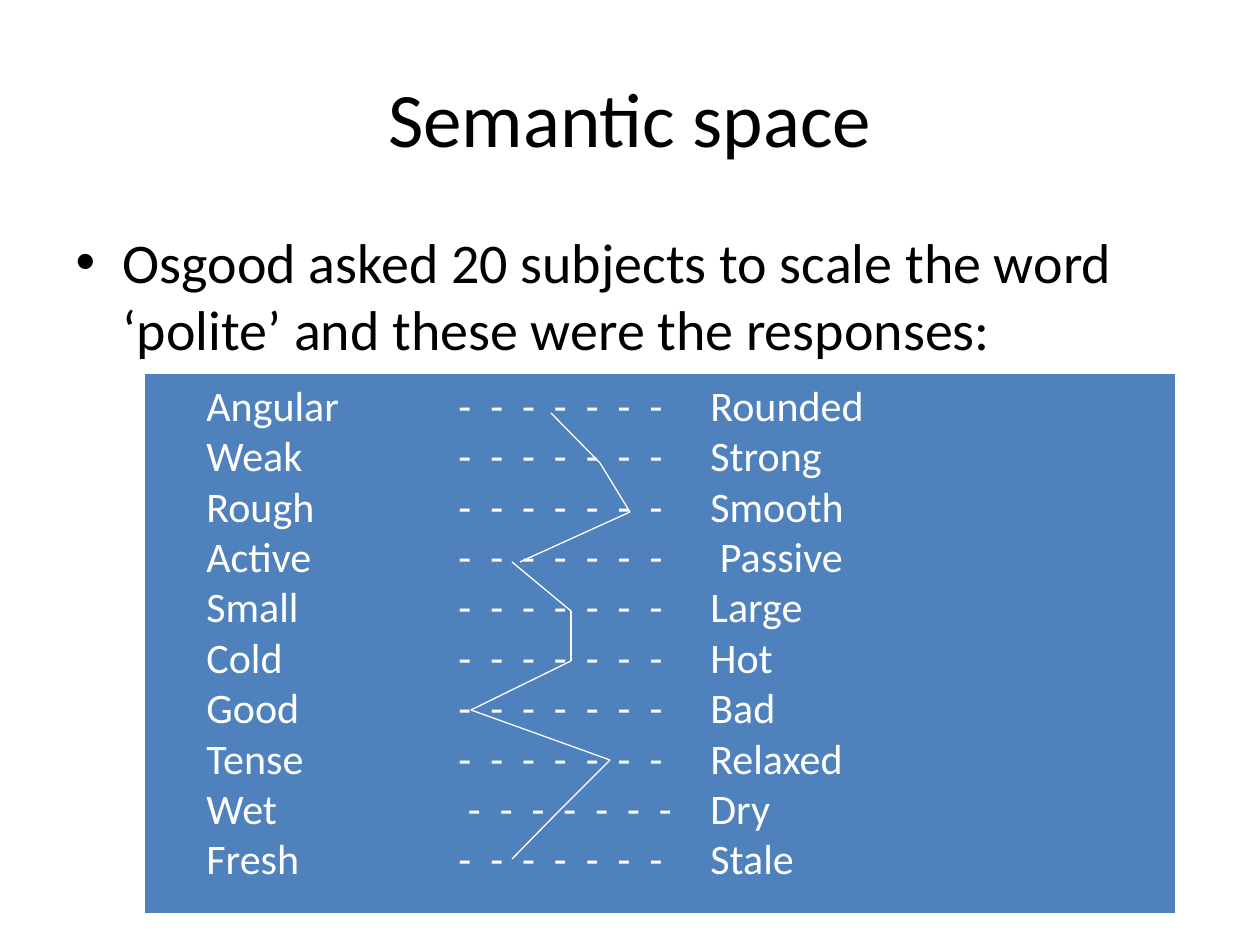
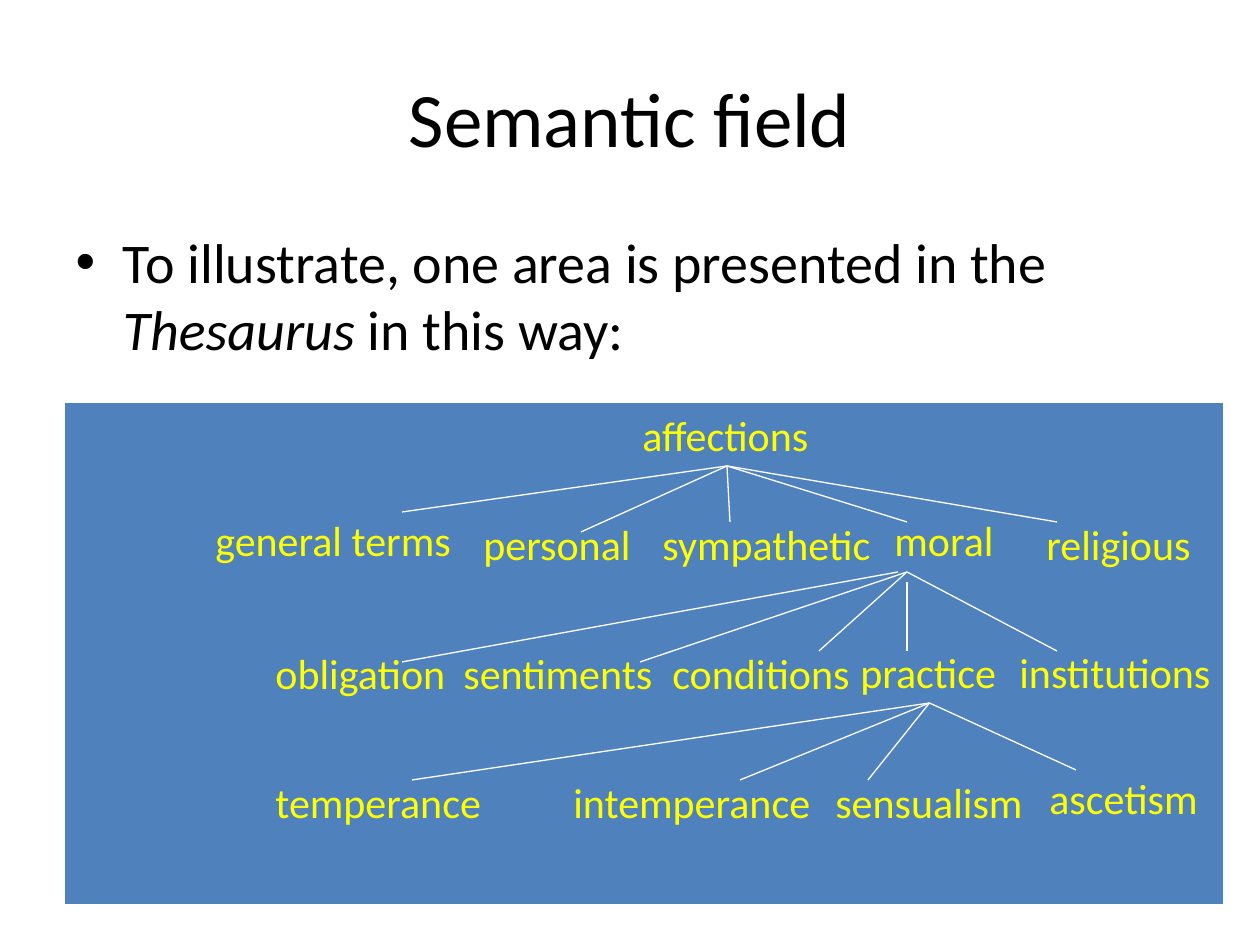
import pptx
import pptx.util
import pptx.dml.color
import pptx.enum.shapes
import pptx.enum.text
import pptx.oxml
import pptx.oxml.ns
from lxml import etree

PX = 914400 // 126
COLORS = {"ink": "000000", "panel": "4F81BD", "line": "FFFFFF",
          "scale": "FFFFFF", "node": "FFFF00"}
FONTS = {
    "title": {"size": pptx.util.Pt(44), "name": "Calibri"},
    "body": {"size": pptx.util.Pt(32), "name": "Calibri"},
    "panel": {"size": pptx.util.Pt(24), "name": "Calibri"},
}
TITLE_BOX = (63, 38, 1134, 158)
BODY_BOX = (63, 221, 1134, 624)
SPACE_PANEL = (144, 373, 1032, 542)
FIELD_PANEL = (64, 402, 1160, 504)
BORDERS = {"a:lnL": 1, "a:lnR": 1, "a:lnT": 1, "a:lnB": 3}

DASHES = "-  -  -  -  -  -  - "
SCALES = [
    ("Angular ", DASHES, "Rounded"), ("Weak ", DASHES, "Strong"),
    ("Rough ", DASHES, "Smooth"), ("Active ", DASHES.rstrip(), " Passive"),
    ("Small ", DASHES, "Large"), ("Cold ", DASHES, "Hot"),
    ("Good ", DASHES, "Bad"), ("Tense ", DASHES, "Relaxed"),
    ("Wet", " " + DASHES, "Dry"), ("Fresh ", DASHES, "Stale"),
]
# The profile has a small break at the fourth scale, so it is two traces:
# (first scale, x of each answer).
PROFILE = [(0, (407, 456, 486, 376)),
           (3, (368, 427, 427, 327, 466, 417, 368))]
PROFILE_TOP, PROFILE_HEIGHT = 40, 446

NODE_HEIGHT = 63
ROOT = ("affections", 566, 1, 194)
# parent, shared line start (None: bottom centre of the parent),
# children as word, left, top, width, line end
BRANCHES = [
    ("affections", None, [
        ("general terms", 139, 106, 263, (338, 110)),
        ("personal", 407, 110, 174, (517, 130)),
        ("sympathetic", 586, 110, 236, (666, 120)),
        ("moral", 818, 106, 126, (843, 120)),
        ("religious", 970, 110, 171, (993, 120))]),
    ("moral", (843, 170), [
        ("obligation", 199, 239, 197, (338, 260)),
        ("sentiments", 387, 239, 217, (576, 260)),
        ("conditions", 596, 239, 204, (755, 249)),
        ("practice", 784, 238, 163, (843, 249)),
        ("institutions", 943, 238, 219, (993, 249))]),
    ("practice", None, [
        ("temperance", 199, 368, 233, (348, 378)),
        ("intemperance", 497, 368, 265, (676, 378)),
        ("sensualism", 759, 368, 214, (804, 378)),
        ("ascetism", 973, 364, 175, (1012, 368))]),
]
OWN_STARTS = {"obligation": (834, 170), "practice": (843, 180)}


def emu(*lengths):
    return [pptx.util.Emu(round(v) * PX) for v in lengths]


def rgb(name):
    return pptx.dml.color.RGBColor.from_string(COLORS[name])


def add_run(p, text, style, color, **extra):
    r = p.add_run()
    r.text = text
    for key, value in {**FONTS[style], **extra}.items():
        setattr(r.font, key, value)
    r.font.color.rgb = rgb(color)


def place(sp, box):
    sp.left, sp.top, sp.width, sp.height = emu(*box)


def add_slide(prs, title, body):
    """Add a titled slide; body is a list of (text, italic) for one bullet."""
    s = prs.slides.add_slide(prs.slide_layouts[1])
    place(s.shapes.title, TITLE_BOX)
    add_run(s.shapes.title.text_frame.paragraphs[0], title, "title", "ink")
    sp = s.placeholders[1]
    place(sp, BODY_BOX)
    for text, italic in body:
        add_run(sp.text_frame.paragraphs[0], text, "body", "ink", italic=italic)
    return s


def add_panel(s, box):
    """Add the one-cell table that backs a diagram."""
    table = s.shapes.add_table(1, 1, *emu(*box)).table
    cell = table.cell(0, 0)
    tc_pr = cell._tc.get_or_add_tcPr()
    for tag, points in BORDERS.items():
        ln = etree.SubElement(tc_pr, pptx.oxml.ns.qn(tag),
                              w=str(pptx.util.Pt(points)))
        fill = etree.SubElement(ln, pptx.oxml.ns.qn("a:solidFill"))
        etree.SubElement(fill, pptx.oxml.ns.qn("a:srgbClr"), val=COLORS["line"])
    cell.fill.solid()
    cell.fill.fore_color.rgb = rgb("panel")


def add_text(s, panel, box, wrap):
    x, y, w, h = box
    sp = s.shapes.add_textbox(*emu(panel[0] + x, panel[1] + y, w, h))
    sp.text_frame.word_wrap = wrap
    sp.text_frame.auto_size = pptx.enum.text.MSO_AUTO_SIZE.SHAPE_TO_FIT_TEXT
    return sp


def add_line(s, panel, start, end):
    x, y = panel[:2]
    line = s.shapes.add_connector(
        pptx.enum.shapes.MSO_CONNECTOR.STRAIGHT,
        *emu(x + start[0], y + start[1], x + end[0], y + end[1]))
    line.line.color.rgb = rgb("line")
    line.line.width = pptx.util.Pt(0.75)
    etree.SubElement(line._element.spPr, pptx.oxml.ns.qn("a:effectLst"))
    return line


def set_tabs(p, *stops):
    tabs = etree.SubElement(p._p.get_or_add_pPr(), pptx.oxml.ns.qn("a:tabLst"))
    for stop in emu(*stops):
        etree.SubElement(tabs, pptx.oxml.ns.qn("a:tab"), pos=str(stop), algn="l")


def add_scales(s, panel):
    tf = add_text(s, panel, (50, 0, 953, 522), True).text_frame
    for i, columns in enumerate(SCALES):
        p = tf.add_paragraph() if i else tf.paragraphs[0]
        set_tabs(p, 252, 504)
        add_run(p, "\t".join(columns), "panel", "scale")


def add_profile(s, panel):
    step = PROFILE_HEIGHT / (len(SCALES) - 1)
    for first, xs in PROFILE:
        points = [(x, PROFILE_TOP + step * i) for i, x in enumerate(xs, first)]
        for start, end in zip(points, points[1:]):
            add_line(s, panel, start, end)


def add_node(s, panel, word, x, y, w):
    sp = add_text(s, panel, (x, y, w, NODE_HEIGHT), False)
    add_run(sp.text_frame.paragraphs[0], word, "panel", "node")
    return sp


def add_tree(s, panel):
    nodes = {ROOT[0]: add_node(s, panel, *ROOT)}
    for parent, hub, children in BRANCHES:
        for word, x, y, w, end in children:
            start = OWN_STARTS.get(word, hub)
            line = add_line(s, panel, start or end, end)
            if start is None:
                line.begin_connect(nodes[parent], 2)
            nodes[word] = add_node(s, panel, word, x, y, w)


def semantic_space(prs):
    s = add_slide(prs, "Semantic space", [
        ("Osgood asked 20 subjects to scale the word ‘polite’ "
         "and these were the responses:", False)])
    add_panel(s, SPACE_PANEL)
    add_scales(s, SPACE_PANEL)
    add_profile(s, SPACE_PANEL)


def semantic_field(prs):
    s = add_slide(prs, "Semantic field", [
        ("To illustrate, one area is presented in the ", False),
        ("Thesaurus", True), (" in this way:", False)])
    add_panel(s, FIELD_PANEL)
    add_tree(s, FIELD_PANEL)


def main():
    prs = pptx.Presentation()
    prs.slide_width, prs.slide_height = emu(1260, 945)
    semantic_space(prs)
    semantic_field(prs)
    prs.save("out.pptx")


if __name__ == "__main__":
    main()
